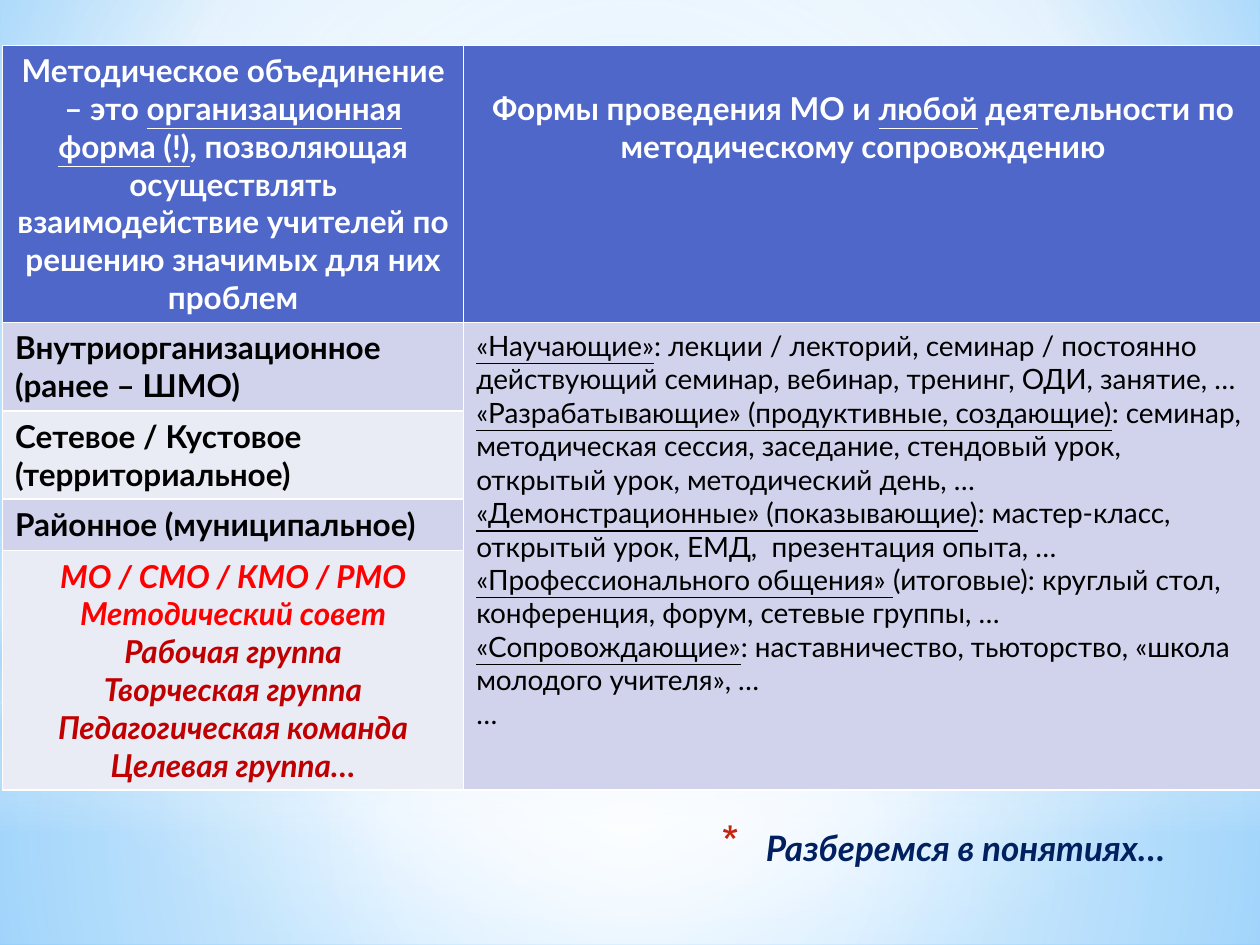
from lxml import etree
from pptx import Presentation
from pptx.dml.color import RGBColor
from pptx.enum.shapes import MSO_SHAPE
from pptx.enum.text import PP_ALIGN
from pptx.oxml import parse_xml
from pptx.oxml.ns import nsdecls, qn
from pptx.util import Inches, Pt

FONT = "Lato"
CENTRE = (50, 50, 50, 50)

# Gradient stops: position %, colour, opacity %
PAGE_STOPS = [(0, "9ED5FF", 100), (60, "FFFFFF", 100), (100, "5BB9FF", 100)]
PAGE_FOCUS = (20, 10, 20, 60)

# Shape, box, stops, focus of a circular gradient (None: top to bottom)
GLOWS = [
    (MSO_SHAPE.RECTANGLE, (0, 5.58, 10, 1.92),
     [(0, "FFFFFF", 91), (37, "FFFFFF", 76), (100, "B4DCFA", 79)], CENTRE),
    (MSO_SHAPE.RECTANGLE, (0, 0, 10, 5.58),
     [(0, "FFFFFF", 89), (48, "FFFFFF", 62), (100, "B4DCFA", 79)], CENTRE),
    (MSO_SHAPE.RECTANGLE, (0, 4.12, 10, 2.5),
     [(0, "FFFFFF", 0), (29, "FFFFFF", 30), (45, "B4DCFA", 40),
      (55, "FFFFFF", 26), (65, "B4DCFA", 60), (100, "FFFFFF", 0)], None),
    (MSO_SHAPE.OVAL, (0, 1.75, 10, 5.58),
     [(0, "FFFFFF", 100), (56, "FFFFFF", 0)], CENTRE),
]

TITLE = "Разберемся в понятиях…"

# A paragraph is a list of runs; a run in a tuple is underlined
DEFINITION = [["Методическое объединение – это ", ("организационная форма (!)",),
               ", позволяющая осуществлять взаимодействие учителей по решению "
               "значимых для них проблем"]]
FORMS_HEAD = [["Формы проведения МО и ", ("любой",),
               " деятельности по методическому сопровождению"]]
LEVELS = ["Внутриорганизационное (ранее – ШМО)",
          "Сетевое / Кустовое (территориальное)",
          "Районное (муниципальное)"]
FORMS = [
    [("«Научающие»",), ": лекции / лекторий, семинар / постоянно действующий "
     "семинар, вебинар, тренинг, ОДИ, занятие, …"],
    [("«Разрабатывающие» (продуктивные, создающие)",), ": семинар, методическая "
     "сессия, заседание, стендовый урок, открытый урок, методический день, …"],
    [("«Демонстрационные» (показывающие)",),
     ": мастер-класс, открытый урок, ЕМД,  презентация опыта, …"],
    [("«Профессионального общения» ",),
     "(итоговые): круглый стол, конференция, форум, сетевые группы, …"],
    [("«Сопровождающие»",),
     ": наставничество, тьюторство, «школа молодого учителя», …"],
    ["…"],
]
COUNCILS = [["МО / СМО / КМО / РМО Методический совет"]]
GROUPS = [["Рабочая группа"], ["Творческая группа"],
          ["Педагогическая команда"], ["Целевая группа…"]]

COLUMNS = [3.66, 6.34]
ROWS = [2.19, 0.7, 0.7, 0.41, 1.9]
HEAD, DARK_BAND, LIGHT_BAND = "4E67C8", "D0D3EB", "E9EBF5"


def rgb(value):
    return RGBColor.from_string(value)


def gradient(stops, focus):
    gs = "".join(
        f'<a:gs pos="{pos * 1000}"><a:srgbClr val="{color}">'
        f'<a:alpha val="{alpha * 1000}"/></a:srgbClr></a:gs>'
        for pos, color, alpha in stops)
    if focus:
        l, t, r, b = (v * 1000 for v in focus)
        way = (f'<a:path path="circle"><a:fillToRect l="{l}" t="{t}" '
               f'r="{r}" b="{b}"/></a:path>')
    else:
        way = '<a:lin ang="5400000" scaled="0"/>'
    return parse_xml(f'<a:gradFill {nsdecls("a")} rotWithShape="1">'
                     f'<a:gsLst>{gs}</a:gsLst>{way}</a:gradFill>')


def swap_solid(parent, new_fill):
    """Replace the solid fill inside parent by new_fill."""
    parent.replace(parent.find(qn("a:solidFill")), new_fill)


def write(tf, paragraphs, size, color, bold=True, italic=False, align=PP_ALIGN.LEFT):
    """Append paragraphs to the text frame, using its empty first one."""
    for runs in paragraphs:
        p = tf.add_paragraph() if tf.text else tf.paragraphs[0]
        p.alignment = align
        f = p.font
        f.name, f.size, f.bold, f.italic = FONT, Pt(size), bold, italic
        f.color.rgb = rgb(color)
        for run in runs:
            r = p.add_run()
            underlined = isinstance(run, tuple)
            r.text = run[0] if underlined else run
            if underlined:
                r.font.underline = True


def add_backdrop(s):
    s.background.fill.solid()
    s.background.fill.fore_color.rgb = rgb("FFFFFF")
    swap_solid(next(s.element.iter(qn("p:bgPr"))), gradient(PAGE_STOPS, PAGE_FOCUS))
    for kind, box, stops, focus in GLOWS:
        sp = s.shapes.add_shape(kind, *map(Inches, box))
        sp.shadow.inherit = False
        sp.line.fill.background()
        sp.fill.solid()
        swap_solid(sp.element.spPr, gradient(stops, focus))


def add_title(s):
    sp = s.shapes.add_textbox(*map(Inches, (5.63, 6.51, 4.37, 0.99)))
    tf = sp.text_frame
    tf.word_wrap = True
    write(tf, [[TITLE]], 20, "002060", italic=True)
    pPr = tf.paragraphs[0]._p.get_or_add_pPr()
    pPr.set("marL", str(Inches(0.35)))
    pPr.set("indent", str(-Inches(0.35)))
    color = etree.Element(qn("a:buClr"))
    etree.SubElement(color, qn("a:srgbClr"), val="C3260C")
    size = etree.Element(qn("a:buSzPct"), val="128000")
    char = etree.Element(qn("a:buChar"), char="*")
    for i, bullet in enumerate((color, size, char)):
        pPr.insert(i, bullet)


def add_table(s):
    table = s.shapes.add_table(len(ROWS), len(COLUMNS), Inches(0.02), Inches(0.36),
                               Inches(sum(COLUMNS)), Inches(sum(ROWS))).table
    for column, width in zip(table.columns, COLUMNS):
        column.width = Inches(width)
    for row, height in zip(table.rows, ROWS):
        row.height = Inches(height)
    table.cell(1, 1).merge(table.cell(len(ROWS) - 1, 1))
    for i in range(len(ROWS)):
        band = HEAD if i == 0 else DARK_BAND if i % 2 else LIGHT_BAND
        for j, color in enumerate((band, DARK_BAND if i else HEAD)):
            cell = table.cell(i, j)
            cell.fill.solid()
            cell.fill.fore_color.rgb = rgb(color)

    for j, text in enumerate((DEFINITION, FORMS_HEAD)):
        write(table.cell(0, j).text_frame, text, 18, "FFFFFF", align=PP_ALIGN.CENTER)
    table.cell(0, 1).margin_top = Inches(0.35)
    for i, level in enumerate(LEVELS, 1):
        write(table.cell(i, 0).text_frame, [[level]], 18, "000000")
    write(table.cell(1, 1).text_frame, FORMS, 16, "000000", bold=False)
    tf = table.cell(len(ROWS) - 1, 0).text_frame
    for text, color in ((COUNCILS, "FF0000"), (GROUPS, "C00000")):
        write(tf, text, 18, color, italic=True, align=PP_ALIGN.CENTER)


def main():
    prs = Presentation()
    prs.slide_width, prs.slide_height = Inches(10), Inches(7.5)
    s = prs.slides.add_slide(prs.slide_layouts[6])
    add_backdrop(s)
    add_title(s)
    add_table(s)
    prs.save("out.pptx")


if __name__ == "__main__":
    main()
